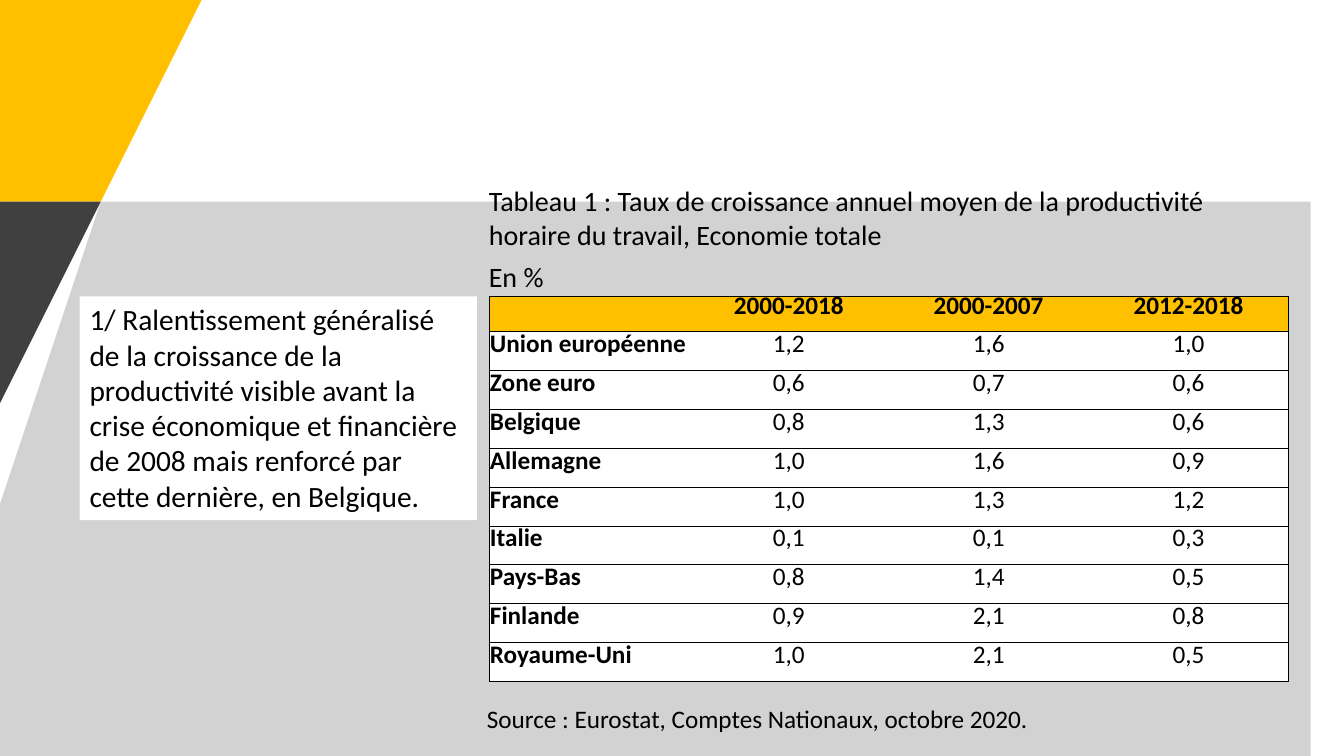
"""Build a slide on the slowdown of labour productivity growth."""
from dataclasses import dataclass

from lxml import etree
from pptx import Presentation
from pptx import util as u
from pptx.dml.color import RGBColor
from pptx.enum import shapes, text
from pptx.oxml import ns

GOLD = RGBColor(0xFF, 0xC0, 0x00)
GREY = RGBColor(0xA6, 0xA6, 0xA6)
CHARCOAL = RGBColor(0x40, 0x40, 0x40)
WHITE = RGBColor(0xFF, 0xFF, 0xFF)
BLACK = RGBColor(0x00, 0x00, 0x00)
FONT = "Calibri"

PAGE_WIDTH, PAGE_HEIGHT = 13.33, 7.5
TABLE_LEFT, TABLE_TOP, TABLE_WIDTH, TABLE_HEIGHT = 4.85, 2.94, 7.93, 3.82
HEADER_HEIGHT = 0.35
CELL_MARGIN = u.Inches(0.01)

GROWTH_RATES = [
    ("", "2000-2018", "2000-2007", "2012-2018"),
    ("Union européenne", "1,2", "1,6", "1,0"),
    ("Zone euro", "0,6", "0,7", "0,6"),
    ("Belgique", "0,8", "1,3", "0,6"),
    ("Allemagne", "1,0", "1,6", "0,9"),
    ("France", "1,0", "1,3", "1,2"),
    ("Italie", "0,1", "0,1", "0,3"),
    ("Pays-Bas", "0,8", "1,4", "0,5"),
    ("Finlande", "0,9", "2,1", "0,8"),
    ("Royaume-Uni", "1,0", "2,1", "0,5"),
]


@dataclass(frozen=True)
class Panel:
    """A filled polygon of the background."""
    points: tuple[tuple[float, float], ...]
    color: RGBColor
    opacity: int = 100


@dataclass(frozen=True)
class Caption:
    """A text block with its place and style."""
    left: float
    top: float
    width: float
    height: float
    size: int
    lines: tuple[str, ...]
    space_after: int = 0
    fill: RGBColor | None = None


PANELS = [
    Panel(((0, 0), (1.93, 0), (1.14, 1.7), (0, 1.7)), GOLD),
    Panel(((1.32, 1.85), (PAGE_WIDTH, 1.85), (PAGE_WIDTH, PAGE_HEIGHT),
           (0, PAGE_HEIGHT), (0, 4.7)), GREY, 50),
    Panel(((0, 1.85), (1.06, 1.85), (0, 4.14)), CHARCOAL),
]

CAPTIONS = [
    Caption(0.79, 2.94, 3.94, 2.22, 21, (
        "1/ Ralentissement généralisé de la croissance de la productivité "
        "visible avant la crise économique et financière de 2008 mais "
        "renforcé par cette dernière, en Belgique.",), fill=WHITE),
    Caption(4.75, 1.77, 8.13, 1.19, 20, (
        "Tableau 1 : Taux de croissance annuel moyen de la productivité "
        "horaire du travail, Economie totale", "En %"), space_after=6),
    Caption(4.73, 6.93, 6.67, 0.4, 18, (
        "Source : Eurostat, Comptes Nationaux, octobre 2020.",), space_after=6),
]


def style_font(para, size: int, bold: bool = False) -> None:
    """Set the font of a whole paragraph."""
    para.font.name = FONT
    para.font.size = u.Pt(size)
    para.font.bold = bold
    para.font.color.rgb = BLACK


def draw_panel(page, panel: Panel) -> None:
    """Draw a background polygon."""
    start, *rest = panel.points
    builder = page.shapes.build_freeform(*start, scale=u.Inches(1))
    builder.add_line_segments(rest, close=True)
    shape = builder.convert_to_shape()
    shape.shadow.inherit = False
    shape.line.fill.background()
    shape.fill.solid()
    shape.fill.fore_color.rgb = panel.color
    if panel.opacity < 100:
        color = shape.element.spPr.find(".//" + ns.qn("a:srgbClr"))
        etree.SubElement(color, ns.qn("a:alpha"), val=str(panel.opacity * 1000))


def draw_caption(page, caption: Caption) -> None:
    """Draw a text block, on a rectangle when it has a fill."""
    place = [u.Inches(length) for length in
             (caption.left, caption.top, caption.width, caption.height)]
    if caption.fill is None:
        box = page.shapes.add_textbox(*place)
    else:
        box = page.shapes.add_shape(shapes.MSO_SHAPE.RECTANGLE, *place)
        box.shadow.inherit = False
        box.line.fill.background()
        box.fill.solid()
        box.fill.fore_color.rgb = caption.fill
    frame = box.text_frame
    frame.word_wrap = True
    frame.auto_size = text.MSO_AUTO_SIZE.SHAPE_TO_FIT_TEXT
    frame.vertical_anchor = text.MSO_ANCHOR.TOP
    frame.text = "\n".join(caption.lines)
    for para in frame.paragraphs:
        para.alignment = text.PP_ALIGN.LEFT
        para.space_after = u.Pt(caption.space_after)
        style_font(para, caption.size)


def set_borders(cell, visible_sides: str) -> None:
    """Give a cell thin black lines on the named sides and none elsewhere."""
    properties = cell._tc.get_or_add_tcPr()
    for side in "LRTB":
        line = etree.SubElement(properties, ns.qn(f"a:ln{side}"), w=str(u.Pt(0.5)))
        if side in visible_sides:
            fill = etree.SubElement(line, ns.qn("a:solidFill"))
            etree.SubElement(fill, ns.qn("a:srgbClr"), val=str(BLACK))
        else:
            etree.SubElement(line, ns.qn("a:noFill"))


def fill_cell(cell, value: str, row: int, column: int, last_column: int) -> None:
    """Write and style one table cell."""
    is_header, is_label = row == 0, column == 0
    set_borders(cell, "TB" + "L" * is_label + "R" * (column == last_column))
    cell.fill.solid()
    cell.fill.fore_color.rgb = GOLD if is_header else WHITE
    cell.vertical_anchor = text.MSO_ANCHOR.MIDDLE
    cell.margin_left = cell.margin_right = CELL_MARGIN
    cell.margin_top = cell.margin_bottom = CELL_MARGIN
    cell.text = value
    para = cell.text_frame.paragraphs[0]
    para.alignment = text.PP_ALIGN.LEFT if is_label else text.PP_ALIGN.CENTER
    para.line_spacing = u.Pt(10 if is_header else 12)
    style_font(para, 18, bold=is_header or is_label)


def draw_table(page, rows: list[tuple[str, ...]]) -> None:
    """Draw the table of growth rates."""
    column_count = len(rows[0])
    table = page.shapes.add_table(
        len(rows), column_count, u.Inches(TABLE_LEFT), u.Inches(TABLE_TOP),
        u.Inches(TABLE_WIDTH), u.Inches(TABLE_HEIGHT)).table
    table.first_row = table.horz_banding = False
    body_height = (TABLE_HEIGHT - HEADER_HEIGHT) / (len(rows) - 1)
    for row, values in enumerate(rows):
        table.rows[row].height = u.Inches(body_height if row else HEADER_HEIGHT)
        for column, value in enumerate(values):
            fill_cell(table.cell(row, column), value, row, column, column_count - 1)


def main() -> None:
    """Build and save the deck."""
    deck = Presentation()
    deck.slide_width = u.Inches(PAGE_WIDTH)
    deck.slide_height = u.Inches(PAGE_HEIGHT)
    page = deck.slides.add_slide(deck.slide_layouts[6])
    for panel in PANELS:
        draw_panel(page, panel)
    for caption in CAPTIONS:
        draw_caption(page, caption)
    draw_table(page, GROWTH_RATES)
    deck.save("out.pptx")


if __name__ == "__main__":
    main()
